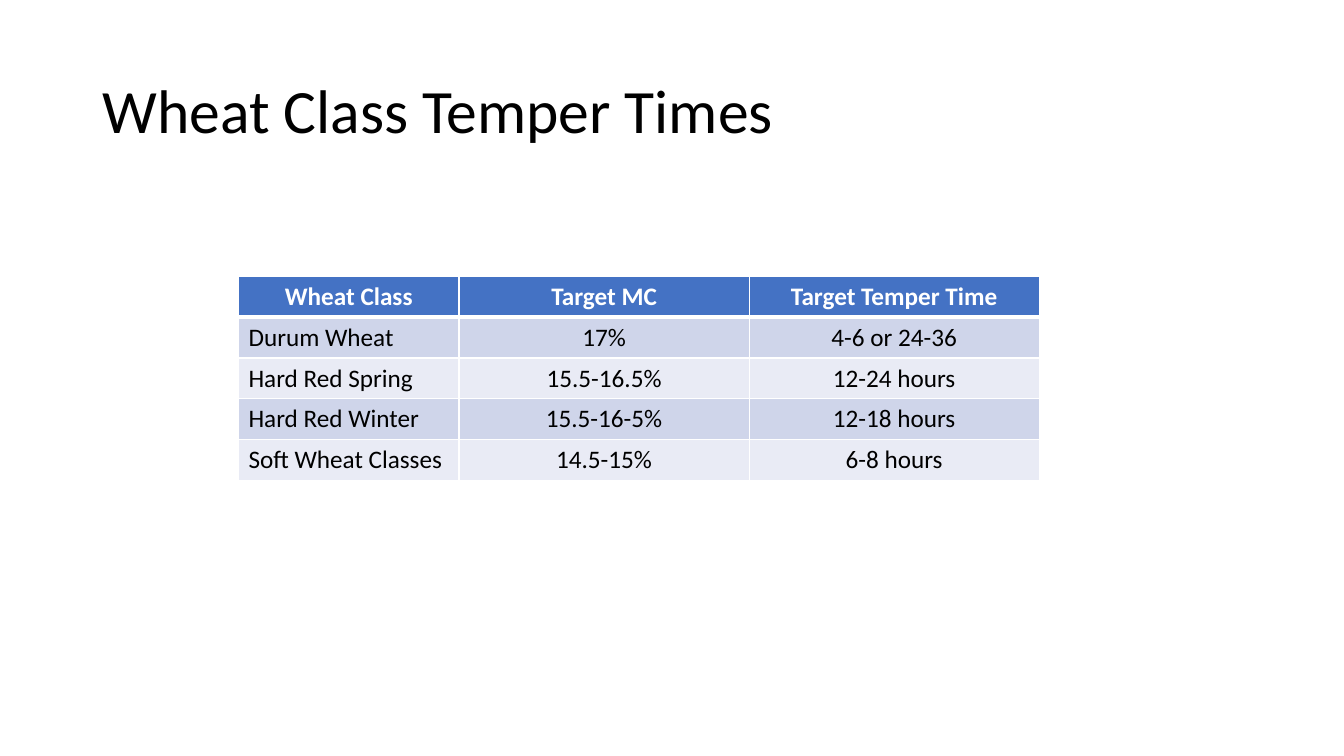
from lxml.etree import SubElement
from pptx import Presentation
from pptx.dml.color import RGBColor
from pptx.enum.text import MSO_ANCHOR, PP_ALIGN
from pptx.oxml.ns import qn
from pptx.util import Cm, Pt


def paint(target, color):
    if hasattr(target, "solid"):
        target.solid()
        target = target.fore_color
    target.rgb = RGBColor.from_string(color)


def write(para, text, color, align, font_format):
    para.alignment = align
    span = para.add_run()
    span.text = text
    for name, value in font_format.items():
        setattr(span.font, name, value)
    paint(span.font.color, color)


deck = Presentation()
deck.slide_width, deck.slide_height = Cm(33.87), Cm(19.05)
page = deck.slides.add_slide(deck.slide_layouts[5])

title = page.shapes.title
title_place = {"left": Cm(2.33), "top": Cm(1.01), "width": Cm(29.21), "height": Cm(3.68)}
for name, value in title_place.items():
    setattr(title, name, value)
title.text_frame.vertical_anchor = MSO_ANCHOR.MIDDLE
title_para = title.text_frame.paragraphs[0]
title_para.line_spacing = 0.9
write(title_para, "Wheat Class Temper Times", "000000", PP_ALIGN.LEFT,
      {"name": "Calibri", "size": Pt(44), "bold": False})

temper_rows = [
    ("Wheat Class", "Target MC", "Target Temper Time"),
    ("Durum Wheat", "17%", "4-6 or 24-36"),
    ("Hard Red Spring", "15.5-16.5%", "12-24 hours"),
    ("Hard Red Winter", "15.5-16-5%", "12-18 hours"),
    ("Soft Wheat Classes", "14.5-15%", "6-8 hours"),
]
column_widths = [Cm(5.56), Cm(7.31), Cm(7.31)]
row_height = Cm(1.03)
table = page.shapes.add_table(
    len(temper_rows), len(column_widths), Cm(6.01), Cm(6.96),
    sum(column_widths), row_height * len(temper_rows)).table
for column, width in zip(table.columns, column_widths):
    column.width = width

for row_index, texts in enumerate(temper_rows):
    table.rows[row_index].height = row_height
    header = row_index == 0
    fill_color = "4472C4" if header else ("E9EBF5", "CFD5EA")[row_index % 2]
    text_color = "FFFFFF" if header else "000000"
    thick_edge = {0: "lnB", 1: "lnT"}.get(row_index)
    for column_index, text in enumerate(texts):
        cell = table.cell(row_index, column_index)
        properties = cell._tc.get_or_add_tcPr()
        for edge in ("lnL", "lnR", "lnT", "lnB"):
            line = SubElement(properties, qn(f"a:{edge}"),
                              w=str(Pt(3 if edge == thick_edge else 1)))
            line_fill = SubElement(line, qn("a:solidFill"))
            SubElement(line_fill, qn("a:srgbClr"), val="FFFFFF")
        paint(cell.fill, fill_color)
        align = PP_ALIGN.CENTER if header or column_index else PP_ALIGN.LEFT
        write(cell.text_frame.paragraphs[0], text, text_color, align,
              {"name": "Calibri", "size": Pt(18), "bold": header})

deck.save("out.pptx")
